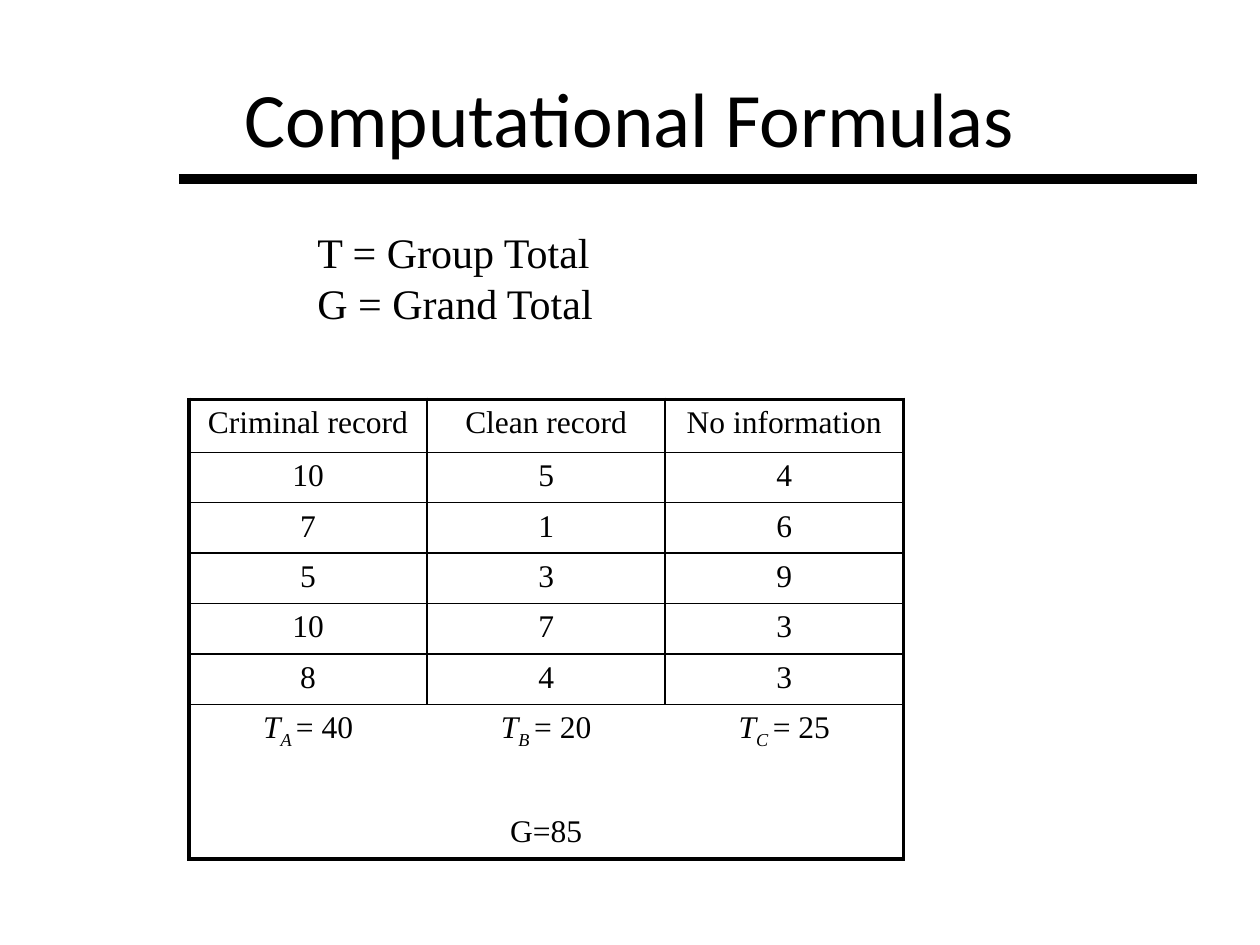
from dataclasses import dataclass

from lxml import etree
from pptx import Presentation
from pptx import util as u
from pptx.dml.color import RGBColor
from pptx.enum import shapes, text
from pptx.oxml.ns import qn


@dataclass(frozen=True)
class Theme:
    ink: str = "000000"
    title_font: str = "Calibri"
    body_font: str = "Times New Roman"
    title_size: float = 44
    definition_size: float = 24
    cell_size: float = 18
    rule_width: float = 6
    frame_width: float = 2.25
    grid_width: float = 1


@dataclass(frozen=True)
class Group:
    heading: str
    letter: str
    scores: tuple[int, ...]


THEME = Theme()
GROUPS = (
    Group("Criminal record", "A", (10, 7, 5, 10, 8)),
    Group("Clean record", "B", (5, 1, 3, 7, 4)),
    Group("No information", "C", (4, 6, 9, 3, 3)),
)
TOTAL_ROW = 1 + len(GROUPS[0].scores)
GRAND_ROW = TOTAL_ROW + 2
LAST_COLUMN = len(GROUPS) - 1
COLUMN_WIDTH, HEADING_HEIGHT, ROW_HEIGHT = 1.89, 0.42, 0.4


def style_run(run, font: str, size: float) -> None:
    run.font.name = font
    run.font.size = u.Pt(size)
    run.font.color.rgb = RGBColor.from_string(THEME.ink)


def add_title(slide, wording: str) -> None:
    title = slide.shapes.title
    title.left, title.top = u.Inches(0.5), u.Inches(0.3)
    title.width, title.height = u.Inches(9), u.Inches(1.25)
    title.text_frame.text = wording
    title.text_frame.vertical_anchor = text.MSO_ANCHOR.MIDDLE
    heading = title.text_frame.paragraphs[0]
    heading.alignment = text.PP_ALIGN.CENTER
    style_run(heading.runs[0], THEME.title_font, THEME.title_size)


def add_rule(slide) -> None:
    height = u.Inches(1.42)
    rule = slide.shapes.add_connector(
        shapes.MSO_CONNECTOR.STRAIGHT, u.Inches(1.42), height, u.Inches(9.5), height)
    rule.line.color.rgb = RGBColor.from_string(THEME.ink)
    rule.line.width = u.Pt(THEME.rule_width)
    etree.SubElement(rule._element.spPr, qn("a:effectLst"))


def add_definitions(slide, wording: str) -> None:
    definitions = slide.shapes.add_textbox(
        u.Inches(2.42), u.Inches(1.75), u.Inches(2.41), u.Inches(0.91))
    frame = definitions.text_frame
    frame.text = wording
    frame.word_wrap = False
    frame.auto_size = text.MSO_AUTO_SIZE.SHAPE_TO_FIT_TEXT
    for paragraph in frame.paragraphs:
        style_run(paragraph.runs[0], THEME.body_font, THEME.definition_size)


def set_borders(cell, row: int, column: int) -> None:
    """Heavy frame outside, thin grid down to the totals, no lines below."""
    grid = THEME.grid_width
    inner_side = grid if row < TOTAL_ROW else 0
    widths = {
        "a:lnL": THEME.frame_width if column == 0 else inner_side,
        "a:lnR": THEME.frame_width if column == LAST_COLUMN else inner_side,
        "a:lnT": THEME.frame_width if row == 0 else grid if row <= TOTAL_ROW else 0,
        "a:lnB": THEME.frame_width if row == GRAND_ROW else inner_side,
    }
    properties = cell._tc.get_or_add_tcPr()
    for tag, width in widths.items():
        border = etree.SubElement(properties, qn(tag), w=str(u.Pt(width)))
        if width:
            paint = etree.SubElement(border, qn("a:solidFill"))
            etree.SubElement(paint, qn("a:srgbClr"), val=THEME.ink)
        else:
            etree.SubElement(border, qn("a:noFill"))


def write_cell(cell, *pieces: str) -> None:
    """Write plain text, or an italic symbol, its subscript and a value."""
    paragraph = cell.text_frame.paragraphs[0]
    paragraph.alignment = text.PP_ALIGN.CENTER
    spacing = etree.SubElement(paragraph._p.get_or_add_pPr(), qn("a:spcBef"))
    etree.SubElement(spacing, qn("a:spcPct"), val="20000")
    for piece in pieces:
        run = paragraph.add_run()
        run.text = piece
        style_run(run, THEME.body_font, THEME.cell_size)
    if len(pieces) == 3:
        symbol, subscript, _ = paragraph.runs
        symbol.font.italic = subscript.font.italic = True
        subscript.font._element.set("baseline", "-25000")


def add_score_table(slide) -> None:
    row_count = GRAND_ROW + 1
    table = slide.shapes.add_table(
        row_count, len(GROUPS), u.Inches(1.5), u.Inches(3.17),
        u.Inches(COLUMN_WIDTH * len(GROUPS)),
        u.Inches(HEADING_HEIGHT + ROW_HEIGHT * GRAND_ROW)).table
    table.first_row = table.horz_banding = False
    for index, row in enumerate(table.rows):
        row.height = u.Inches(ROW_HEIGHT if index else HEADING_HEIGHT)
    for column, group in enumerate(GROUPS):
        table.columns[column].width = u.Inches(COLUMN_WIDTH)
        for row in range(row_count):
            cell = table.cell(row, column)
            set_borders(cell, row, column)
            cell.fill.background()
        write_cell(table.cell(0, column), group.heading)
        for row, score in enumerate(group.scores, start=1):
            write_cell(table.cell(row, column), str(score))
        write_cell(table.cell(TOTAL_ROW, column),
                   "T", f"{group.letter} ", f"= {sum(group.scores)}")
    grand_total = sum(sum(group.scores) for group in GROUPS)
    write_cell(table.cell(GRAND_ROW, 1), f"G={grand_total}")


def main() -> None:
    deck = Presentation()
    deck.slide_width, deck.slide_height = u.Inches(10), u.Inches(7.5)
    slide = deck.slides.add_slide(deck.slide_layouts.get_by_name("Title Only"))
    add_rule(slide)
    add_title(slide, "Computational Formulas")
    add_score_table(slide)
    add_definitions(slide, "T = Group Total\nG = Grand Total")
    deck.save("out.pptx")


if __name__ == "__main__":
    main()
